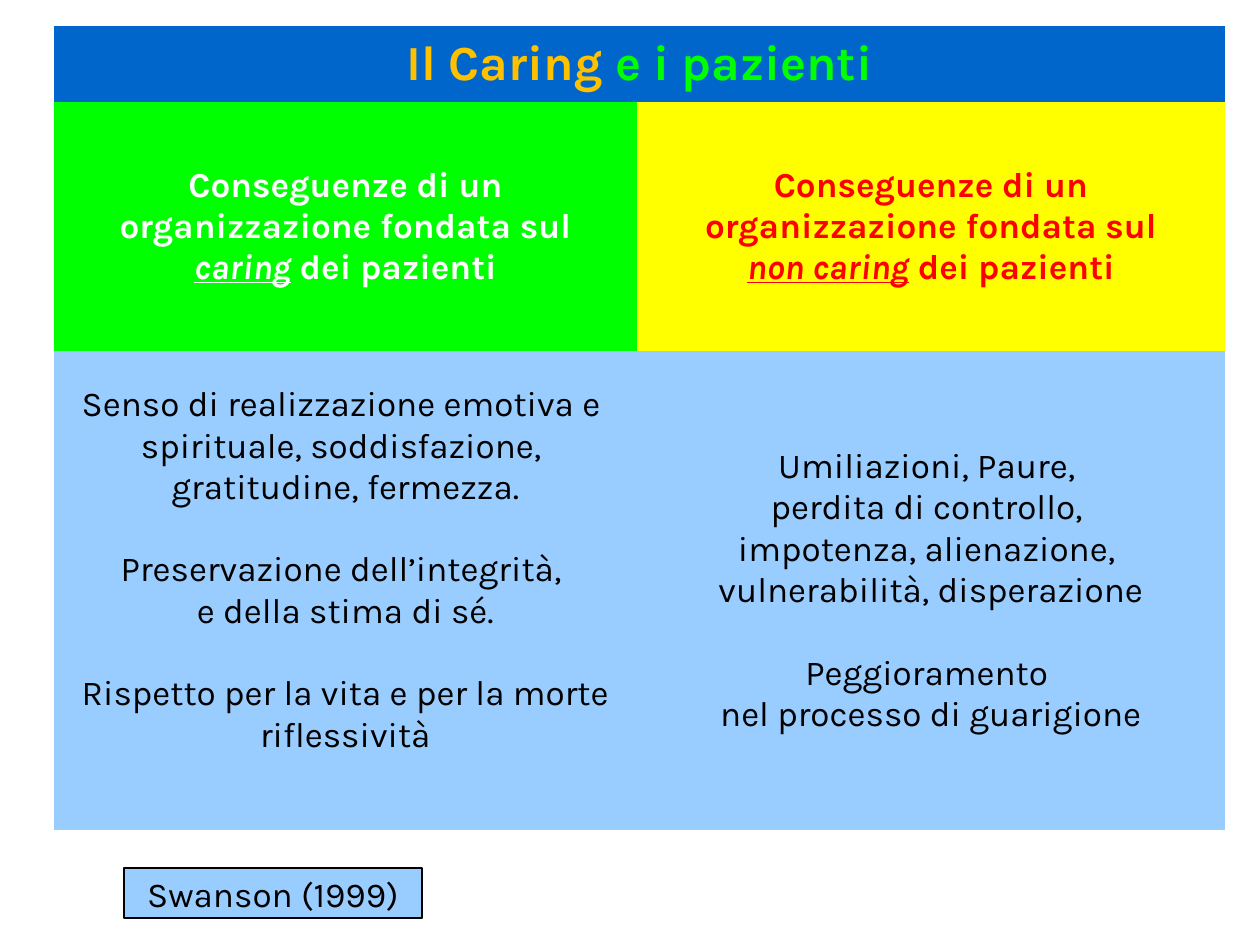
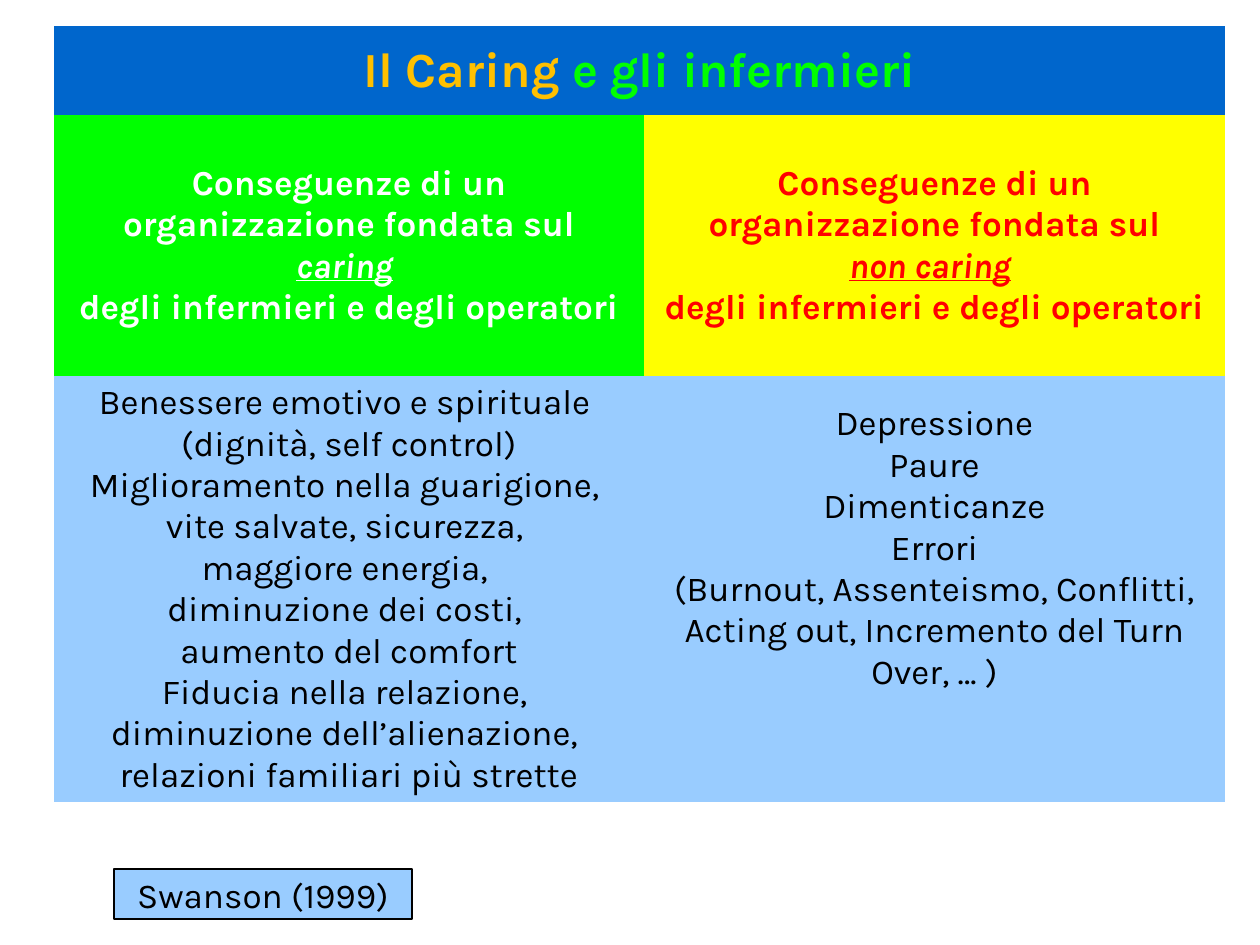
from dataclasses import dataclass
from pptx import Presentation
from pptx.dml.color import RGBColor as Rgb
from pptx.enum.shapes import MSO_SHAPE as Shape
from pptx.enum.text import MSO_ANCHOR as Anchor, PP_ALIGN as Align
from pptx.oxml.ns import qn
from pptx.util import Pt

PX = 914400 / 126
NO_STYLE = "{2D5ABB26-0587-4C30-8999-92F81FD0307C}"


@dataclass(frozen=True)
class Theme:
    font: str = "Karla"
    big: int = 28
    text: int = 20
    lead: float = 1.01
    blue: str = "0066CC"
    sky: str = "99CCFF"
    green: str = "00FF00"
    yellow: str = "FFFF00"
    amber: str = "FFC000"
    red: str = "FF0000"
    white: str = "FFFFFF"
    black: str = "000000"


T = Theme()
PLAIN = dict(name=T.font, size=Pt(T.text), bold=False, color=T.black)
HEAD = PLAIN | dict(bold=True)
TITLE = HEAD | dict(size=Pt(T.big), color=T.green)
STRESS = dict(italic=True, underline=True)
AMBER = dict(color=T.amber)
GAP = 41  # height of one line of text


def px(n):
    return round(n * PX)


def paint(part, color):
    part.fill.solid()
    part.fill.fore_color.rgb = Rgb.from_string(color)


def style(font, look):
    for key, val in look.items():
        if key == "color":
            font.color.rgb = Rgb.from_string(val)
        else:
            setattr(font, key, val)


def write(frame, groups, look, alt=STRESS):
    """Write groups of lines; words between underscores take the alt look."""
    lines = [(line, g > 0 and n == 0)
             for g, group in enumerate(groups) for n, line in enumerate(group)]
    for i, (line, apart) in enumerate(lines):
        para = frame.paragraphs[0] if i == 0 else frame.add_paragraph()
        para.alignment, para.line_spacing = Align.CENTER, T.lead
        if apart:
            para.space_before = px(GAP)
        for k, piece in enumerate(line.split("_")):
            if piece:
                run = para.add_run()
                run.text = piece
                style(run.font, look | alt if k % 2 else look)


def cell_text(cell, color, groups, look, alt=STRESS, lift=0):
    paint(cell, color)
    cell.vertical_anchor = Anchor.MIDDLE
    cell.margin_bottom = px(6 + lift)
    write(cell.text_frame, groups, look, alt)


def grid(slide, box, cols, rows, title, heads, lists, lifts):
    """Title band, two coloured headings and two lists."""
    table = slide.shapes.add_table(3, 2, *map(px, box)).table
    table.first_row = table.horz_banding = False
    table._tbl.tblPr.find(qn("a:tableStyleId")).text = NO_STYLE
    for col, width in zip(table.columns, cols):
        col.width = px(width)
    for row, height in zip(table.rows, rows):
        row.height = px(height)
    # Title across both columns
    table.cell(0, 0).merge(table.cell(0, 1))
    cell_text(table.cell(0, 0), T.blue, [[title]], TITLE, AMBER)
    # Headings and lists
    tones = (T.green, T.white), (T.yellow, T.red)
    for c, (back, ink) in enumerate(tones):
        cell_text(table.cell(1, c), back, [heads[c]], HEAD | dict(color=ink))
        cell_text(table.cell(2, c), T.sky, lists[c], PLAIN, lift=lifts[c])


def source(slide, box):
    """Label with the author and year."""
    label = slide.shapes.add_shape(Shape.ROUNDED_RECTANGLE, *map(px, box))
    label.adjustments[0] = 0.0
    label.shadow.inherit = False
    paint(label, T.sky)
    label.line.color.rgb = Rgb.from_string(T.black)
    label.line.width = Pt(0.75)
    label.text_frame.vertical_anchor = Anchor.MIDDLE
    write(label.text_frame, [["Swanson (1999)"]], PLAIN)


LEAD = "Conseguenze di un organizzazione fondata sul"
STAFF = "degli infermieri e degli operatori"

PAGES = [
    dict(
        cols=(583, 588), rows=(76, 249, 479), label=(124, 868),
        title="_Il Caring _e i pazienti",
        heads=([LEAD, "_caring_ dei pazienti"],
               [LEAD, "_non caring_ dei pazienti"]),
        lists=(
            [["Senso di realizzazione emotiva e ",
              "spirituale, soddisfazione, ", "gratitudine, fermezza."],
             ["Preservazione dell’integrità, ", "e della stima di sé."],
             ["Rispetto per la vita e per la morte", "riflessività"]],
            [["Umiliazioni, Paure, ", "perdita di controllo, ",
              "impotenza, alienazione, ", "vulnerabilità, disperazione"],
             ["Peggioramento ", "nel processo di guarigione"]],
        ),
        lifts=(GAP, 0),
    ),
    dict(
        cols=(590, 581), rows=(89, 261, 426), label=(114, 869),
        title="_Il Caring _e gli infermieri",
        heads=([LEAD, "_caring_ ", STAFF], [LEAD, "_non caring_ ", STAFF]),
        lists=(
            [["Benessere emotivo e spirituale ", "(dignità, self control)",
              "Miglioramento nella guarigione, ", "vite salvate, sicurezza, ",
              "maggiore energia, ", "diminuzione dei costi, ",
              "aumento del comfort", "Fiducia nella relazione, ",
              "diminuzione dell’alienazione, ",
              "relazioni familiari più strette"]],
            [["Depressione", "Paure", "Dimenticanze", "Errori",
              "(Burnout, Assenteismo, Conflitti, Acting out, "
              "Incremento del Turn Over, … )"]],
        ),
        lifts=(0, 2 * GAP),
    ),
]


def main():
    deck = Presentation()
    deck.slide_width, deck.slide_height = px(1260), px(945)
    for page in PAGES:
        slide = deck.slides.add_slide(deck.slide_layouts[6])
        parts = dict(page)
        spot = parts.pop("label")
        grid(slide, (54, 26, sum(page["cols"]), sum(page["rows"])), **parts)
        source(slide, (*spot, 298, 50))
    deck.save("out.pptx")


if __name__ == "__main__":
    main()
